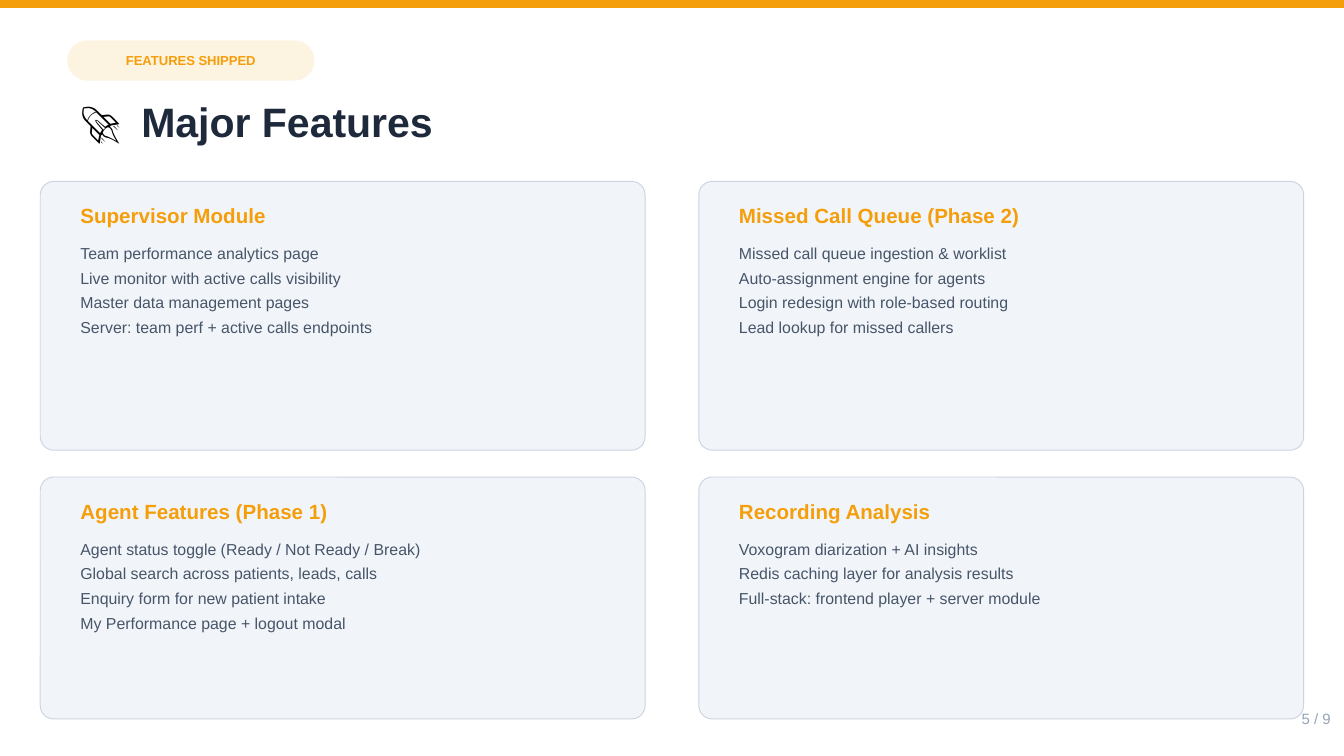
import pptx
import pptx.util
import pptx.dml.color
import pptx.enum.shapes
import pptx.enum.text
import pptx.oxml
import pptx.oxml.ns
import lxml.etree

Pt = pptx.util.Pt
ALIGN = pptx.enum.text.PP_ALIGN
ANCHOR = pptx.enum.text.MSO_ANCHOR
SHAPE = pptx.enum.shapes.MSO_SHAPE

COLORS = {
    "accent": "F59E0B",
    "title": "1E293B",
    "body": "475569",
    "muted": "94A3B8",
    "card": "F1F5F9",
    "border": "CBD5E1",
    "black": "000000",
}


class SlideBuilder:
    font_name = "Arial"
    card_radius = 7.2
    padding = 14.4

    def __init__(self, slide):
        self.slide = slide

    def color(self, name):
        return pptx.dml.color.RGBColor.from_string(COLORS[name])

    def format_run(self, run, size, color, bold=False):
        run.font.name = self.font_name
        run.font.size = Pt(size)
        run.font.bold = bold
        run.font.color.rgb = self.color(color)

    def fill_text(self, shape, lines, size, color, bold=False, align=ALIGN.LEFT,
                  anchor=ANCHOR.MIDDLE, line_spacing=None, space_after=None):
        frame = shape.text_frame
        frame.word_wrap = True
        frame.vertical_anchor = anchor
        frame.text = "\n".join(lines)
        for paragraph in frame.paragraphs:
            paragraph.alignment = align
            if line_spacing:
                paragraph.line_spacing = line_spacing
            if space_after:
                paragraph.space_after = Pt(space_after)
            for run in paragraph.runs:
                self.format_run(run, size, color, bold)

    def box(self, left, top, width, height, fill, radius=None, border=None, alpha=None):
        kind = SHAPE.RECTANGLE if radius is None else SHAPE.ROUNDED_RECTANGLE
        shape = self.slide.shapes.add_shape(kind, Pt(left), Pt(top), Pt(width), Pt(height))
        shape.shadow.inherit = False
        if radius is not None:
            shape.adjustments[0] = radius / height
        shape.fill.solid()
        shape.fill.fore_color.rgb = self.color(fill)
        if alpha:
            fill_color = shape.fill._xPr.find(".//" + pptx.oxml.ns.qn("a:srgbClr"))
            element = lxml.etree.SubElement(fill_color, pptx.oxml.ns.qn("a:alpha"))
            element.set("val", str(alpha * 1000))
        if border:
            shape.line.color.rgb = self.color(border)
            shape.line.width = Pt(0.5)
        else:
            shape.line.fill.background()
        return shape

    def text(self, left, top, width, height, lines, size, color, **style):
        shape = self.slide.shapes.add_textbox(Pt(left), Pt(top), Pt(width), Pt(height))
        self.fill_text(shape, lines, size, color, **style)

    def title(self, left, top, width, height, icon, words, tab):
        shape = self.slide.shapes.title
        shape.left, shape.top = Pt(left), Pt(top)
        shape.width, shape.height = Pt(width), Pt(height)
        frame = shape.text_frame
        frame.auto_size = pptx.enum.text.MSO_AUTO_SIZE.NONE
        frame.vertical_anchor = ANCHOR.MIDDLE
        paragraph = frame.paragraphs[0]
        paragraph.alignment = ALIGN.LEFT
        properties = paragraph._p.get_or_add_pPr()
        tabs = lxml.etree.SubElement(properties, pptx.oxml.ns.qn("a:tabLst"))
        stop = lxml.etree.SubElement(tabs, pptx.oxml.ns.qn("a:tab"))
        stop.set("pos", str(Pt(tab)))
        stop.set("algn", "l")
        for words_part, color, bold in ((icon + "\t", "black", False), (words, "title", True)):
            run = paragraph.add_run()
            run.text = words_part
            self.format_run(run, 22, color, bold)

    def pill(self, left, top, width, height, label):
        shape = self.box(left, top, width, height, "accent", radius=height / 2, alpha=12)
        self.fill_text(shape, [label], 7, "accent", bold=True, align=ALIGN.CENTER)

    def card(self, left, top, width, height, heading, lines):
        self.box(left, top, width, height, "card", radius=self.card_radius, border="border")
        text_left = left + self.padding
        text_width = width - 2 * self.padding
        self.text(text_left, top + 5.76, text_width, 25.2, [heading], 11, "accent", bold=True)
        self.text(text_left, top + 28.8, text_width, height - 36, lines, 8.5, "body",
                  anchor=ANCHOR.TOP, line_spacing=1.1, space_after=2)


CARD_ROWS = [
    (97.2, 144, [
        ("Supervisor Module", [
            "Team performance analytics page",
            "Live monitor with active calls visibility",
            "Master data management pages",
            "Server: team perf + active calls endpoints",
        ]),
        ("Missed Call Queue (Phase 2)", [
            "Missed call queue ingestion & worklist",
            "Auto-assignment engine for agents",
            "Login redesign with role-based routing",
            "Lead lookup for missed callers",
        ]),
    ]),
    (255.6, 129.6, [
        ("Agent Features (Phase 1)", [
            "Agent status toggle (Ready / Not Ready / Break)",
            "Global search across patients, leads, calls",
            "Enquiry form for new patient intake",
            "My Performance page + logout modal",
        ]),
        ("Recording Analysis", [
            "Voxogram diarization + AI insights",
            "Redis caching layer for analysis results",
            "Full-stack: frontend player + server module",
        ]),
    ]),
]


def main():
    presentation = pptx.Presentation()
    presentation.slide_width = Pt(720)
    presentation.slide_height = Pt(405)
    builder = SlideBuilder(presentation.slides.add_slide(presentation.slide_layouts[5]))

    builder.box(0, 0, 720, 4.32, "accent")
    builder.pill(36, 21.6, 132.48, 21.6, "FEATURES SHIPPED")
    builder.title(36, 46.8, 648, 36, "🚀", "Major Features", tab=32.5)

    card_left, card_width, card_gap = 21.6, 324, 28.8
    for top, height, cards in CARD_ROWS:
        for column, (heading, lines) in enumerate(cards):
            left = card_left + column * (card_width + card_gap)
            builder.card(left, top, card_width, height, heading, lines)

    builder.text(633.6, 374.4, 86.4, 21.6, ["5 / 9"], 8, "muted", align=ALIGN.RIGHT)
    presentation.save("out.pptx")


if __name__ == "__main__":
    main()
